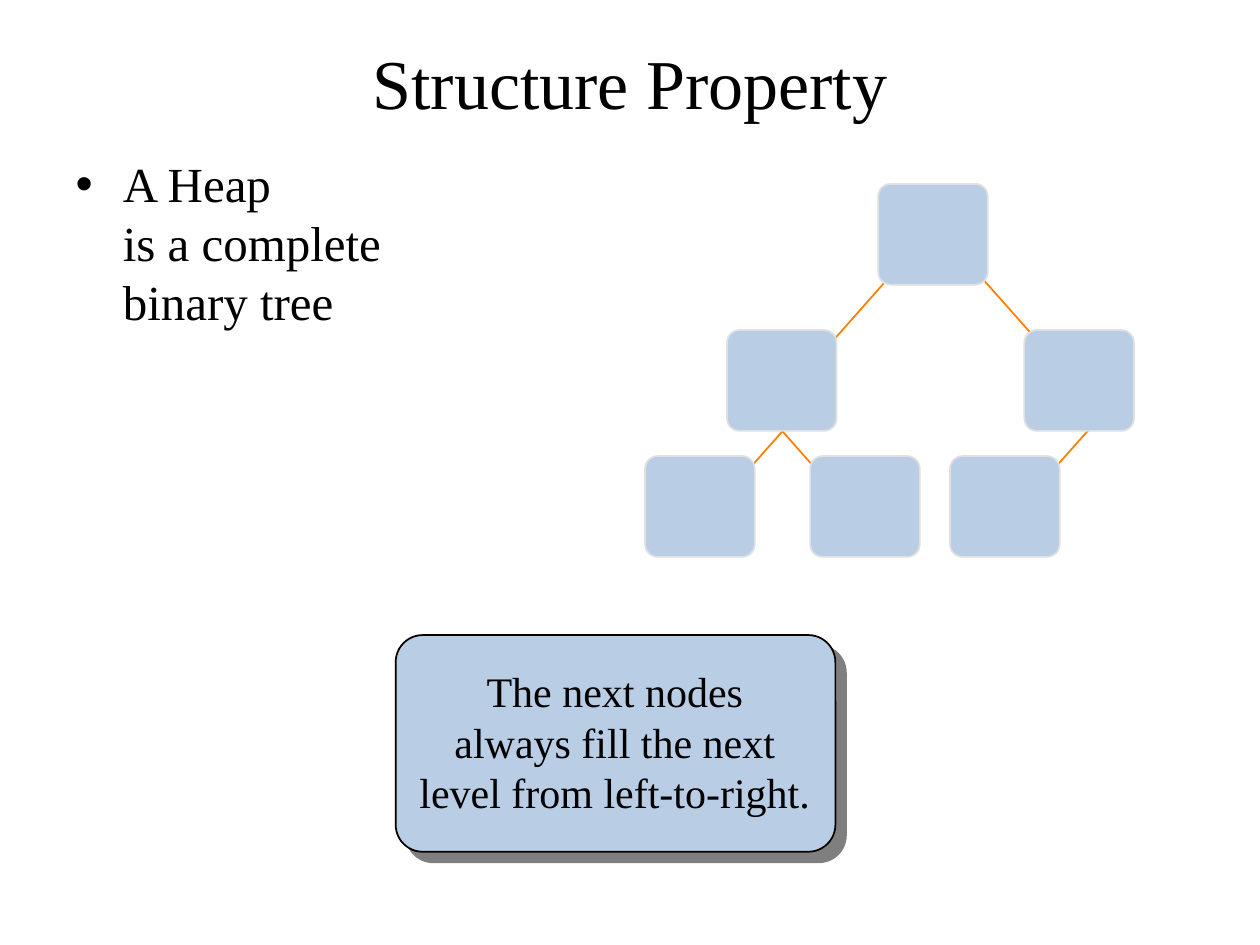
from dataclasses import dataclass

from lxml.etree import SubElement
from pptx import Presentation
from pptx.dml.color import RGBColor
from pptx.enum.shapes import MSO_CONNECTOR, MSO_SHAPE
from pptx.enum.text import MSO_ANCHOR, MSO_AUTO_SIZE, PP_ALIGN
from pptx.oxml.ns import qn
from pptx.util import Inches, Pt

COLORS = {"text": "000000", "fill": "B9CDE5", "edge": "E0E0E0",
          "link": "FF8000", "frame": "000000"}
FONT = "Times New Roman"
WIDE, HIGH = 10, 7.5
BOX_W, BOX_H = 0.87, 0.8
ROWS = (1.46, 2.62, 3.62)


@dataclass
class Node:
    left: float
    row: int
    side: str = ""
    slip: float = 0


NODES = (
    Node(7.54, 2, "left"),
    Node(6.43, 2, "right"),
    Node(5.12, 2, "left"),
    Node(8.13, 1, "right", 0.04),
    Node(6.97, 0),
    Node(5.77, 1, "left"),
)


def color(name: str) -> RGBColor:
    return RGBColor.from_string(COLORS[name])


def add_run(para, text: str, size: int) -> None:
    run = para.add_run()
    run.text = text
    run.font.name = FONT
    run.font.size = Pt(size)
    run.font.color.rgb = color("text")


def place(shape, left: float, top: float, width: float, height: float) -> None:
    shape.left, shape.top = Inches(left), Inches(top)
    shape.width, shape.height = Inches(width), Inches(height)


def add_box(slide, left: float, top: float, width: float, height: float,
            edge: str = "", curve: float = 0.125):
    box = slide.shapes.add_shape(
        MSO_SHAPE.ROUNDED_RECTANGLE,
        Inches(left), Inches(top), Inches(width), Inches(height))
    box.adjustments[0] = curve
    box.shadow.inherit = False
    box.fill.solid()
    box.fill.fore_color.rgb = color("fill")
    if edge:
        box.line.color.rgb = color(edge)
        box.line.width = Pt(1)
    else:
        box.line.fill.background()
    return box


def add_link(slide, node: Node) -> None:
    """Join a node to its parent; right-hand links mirror left-hand ones."""
    start, end = 1.27, 0.65
    if node.side == "right":
        start, end = BOX_W - start, BOX_W - end
    left, top = node.left + node.slip, ROWS[node.row] - node.slip
    link = slide.shapes.add_connector(
        MSO_CONNECTOR.STRAIGHT,
        Inches(left + start), Inches(top - 0.4),
        Inches(left + end), Inches(top + 0.3))
    link.line.color.rgb = color("link")
    link.line.width = Pt(1)
    SubElement(link._element.spPr, qn("a:effectLst"))


def add_tree(slide) -> None:
    """Draw the links first, so that the boxes cover their ends."""
    for node in NODES:
        if node.side:
            add_link(slide, node)
    for node in NODES:
        add_box(slide, node.left, ROWS[node.row], BOX_W, BOX_H, "edge")


def add_shadow(shape) -> None:
    effects = shape._element.spPr.find(qn("a:effectLst"))
    shadow = SubElement(effects, qn("a:outerShdw"), blurRad="0",
                        dist=str(Pt(8.5)), dir=str(45 * 60000),
                        algn="ctr", rotWithShape="0")
    shade = SubElement(shadow, qn("a:srgbClr"), val=COLORS["frame"])
    SubElement(shade, qn("a:alpha"), val="50000")


def add_note(slide, lines: tuple[str, ...]) -> None:
    add_shadow(add_box(slide, 3.14, 5.04, 3.49, 1.72, "frame"))
    plate = add_box(slide, 3.21, 5.11, 3.34, 1.58, curve=0)
    frame = plate.text_frame
    frame.word_wrap = True
    frame.vertical_anchor = MSO_ANCHOR.MIDDLE
    for i, line in enumerate(lines):
        para = frame.add_paragraph() if i else frame.paragraphs[0]
        para.alignment = PP_ALIGN.CENTER
        add_run(para, line, 24)
    frame.paragraphs[0].line_spacing = 0.93


def add_title(slide, text: str) -> None:
    title = slide.shapes.title
    place(title, WIDE * 0.05, HIGH * 0.04, WIDE * 0.9, 0.7)
    title.text_frame.auto_size = MSO_AUTO_SIZE.NONE
    title.text_frame.vertical_anchor = MSO_ANCHOR.MIDDLE
    para = title.text_frame.paragraphs[0]
    para.alignment = PP_ALIGN.CENTER
    add_run(para, text, 40)


def add_body(slide, lines: tuple[str, ...]) -> None:
    body = slide.placeholders[1]
    place(body, WIDE * 0.05, 1.17, WIDE * 0.9, 5.53)
    body.text_frame.auto_size = MSO_AUTO_SIZE.NONE
    para = body.text_frame.paragraphs[0]
    for i, line in enumerate(lines):
        if i:
            para.add_line_break()
        add_run(para, line, 28)


def main() -> None:
    deck = Presentation()
    deck.slide_width, deck.slide_height = Inches(WIDE), Inches(HIGH)
    slide = deck.slides.add_slide(deck.slide_layouts[1])
    add_title(slide, "Structure Property")
    add_body(slide, ("A Heap ", "is a complete ", "binary tree"))
    add_note(slide, ("The next nodes", "always fill the next",
                     "level from left-to-right."))
    add_tree(slide)
    deck.save("out.pptx")


if __name__ == "__main__":
    main()
